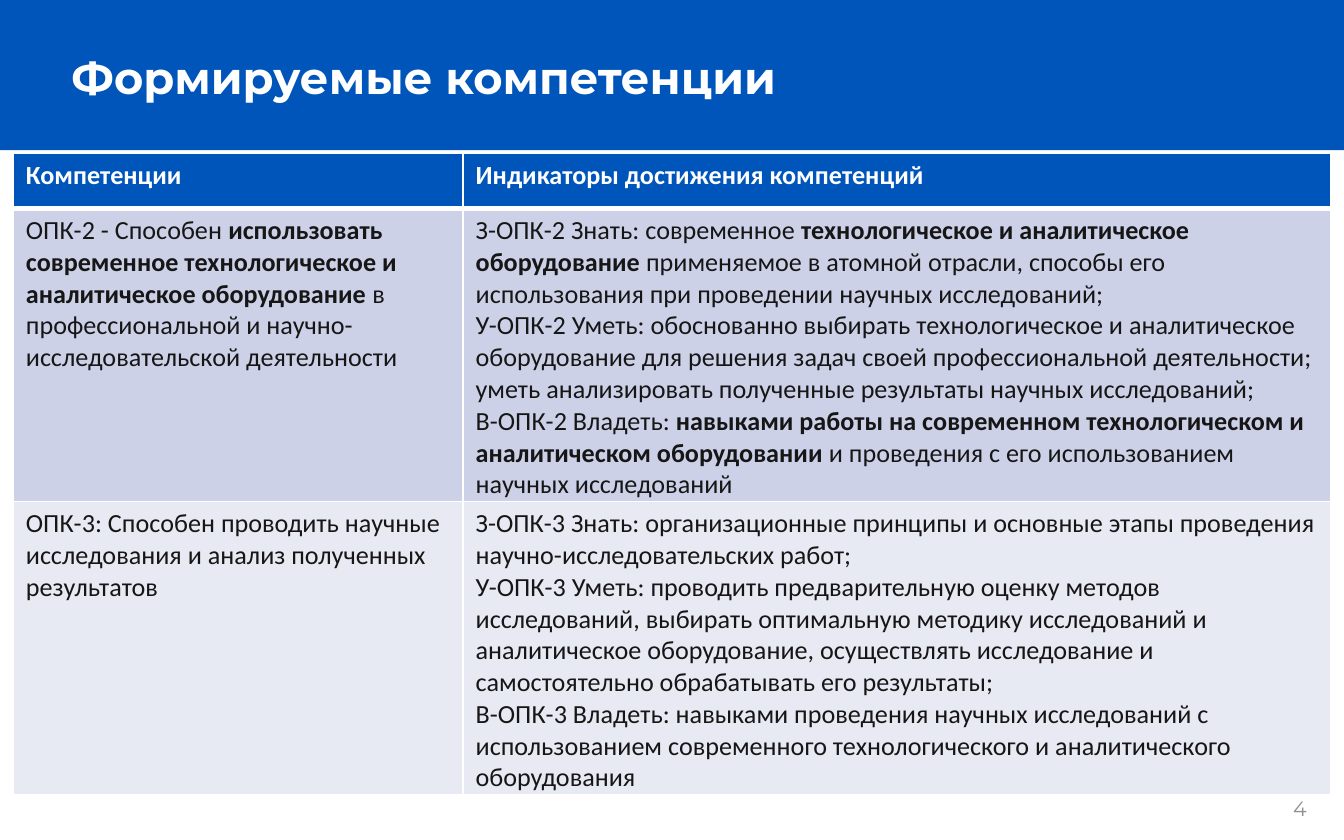
from lxml.etree import SubElement
from pptx import Presentation
from pptx.dml.color import RGBColor as RGB
from pptx.enum.shapes import MSO_SHAPE as SHAPE
from pptx.enum.text import MSO_ANCHOR as ANCHOR, PP_ALIGN as ALIGN
from pptx.oxml import parse_xml
from pptx.oxml.ns import nsdecls, qn
from pptx.util import Cm, Pt

COLORS = {"blue": "0055BB", "white": "FFFFFF", "text": "171616",
          "grey": "8F9092", "band": "CCD1E7", "light": "E7E9F3"}


def color(name):
    return RGB.from_string(COLORS[name])


def write(tf, text, font="Calibri", size=14, fill="text", bold=False):
    """Fill a text frame: one paragraph a line, *stars* switch bold."""
    for i, line in enumerate(text.split("\n")):
        p = tf.paragraphs[0] if i == 0 else tf.add_paragraph()
        p.alignment = ALIGN.LEFT
        for j, part in enumerate(line.split("*")):
            if part:
                r = p.add_run()
                r.text = part
                r.font.name, r.font.size = font, Pt(size)
                r.font.bold = bold or j % 2 == 1
                r.font.color.rgb = color(fill)


prs = Presentation()
prs.slide_width, prs.slide_height = Cm(25.4), Cm(15.88)
s = prs.slides.add_slide(prs.slide_layouts[5])

# Header band
band = s.shapes.add_shape(SHAPE.RECTANGLE, 0, 0, prs.slide_width, Cm(2.84))
band.shadow.inherit = False
band.fill.solid()
band.fill.fore_color.rgb = color("blue")
band.line.fill.background()

# Title, in front of the band
title = s.shapes.title
title.left, title.top, title.width, title.height = Cm(1.17), Cm(0.83), Cm(23.09), Cm(1.22)
band._element.addnext(title._element)
title.text_frame.vertical_anchor = ANCHOR.MIDDLE
write(title.text_frame, "Формируемые компетенции",
      font="Montserrat", size=24, fill="white", bold=True)

# Competence table
rows = [
    ("Компетенции", "Индикаторы достижения компетенций"),
    ("ОПК-2 - Способен *использовать*\n"
     "*современное технологическое и аналитическое оборудование *"
     "в профессиональной и научно-\n"
     "исследовательской деятельности",
     "З-ОПК-2 Знать: современное *технологическое и аналитическое оборудование *"
     "применяемое в атомной отрасли, способы его использования при проведении "
     "научных исследований;\n"
     "У-ОПК-2 Уметь: обоснованно выбирать технологическое и аналитическое "
     "оборудование для решения задач своей профессиональной деятельности; "
     "уметь анализировать полученные результаты научных исследований;\n"
     "В-ОПК-2 Владеть: *навыками работы на современном технологическом и "
     "аналитическом оборудовании *и проведения с его использованием "
     "научных исследований"),
    ("ОПК-3: Способен проводить научные исследования и анализ полученных результатов",
     "З-ОПК-3 Знать: организационные принципы и основные этапы проведения "
     "научно-исследовательских работ;\n"
     "У-ОПК-3 Уметь: проводить предварительную оценку методов исследований, "
     "выбирать оптимальную методику исследований и аналитическое оборудование, "
     "осуществлять исследование и самостоятельно обрабатывать его результаты;\n"
     "В-ОПК-3 Владеть: навыками проведения научных исследований с использованием "
     "современного технологического и аналитического оборудования"),
]
widths, heights = (8.5, 16.4), (1.04, 5.54, 5.54)
fills = ("blue", "band", "light")

frame = s.shapes.add_table(len(rows), len(widths), Cm(0.25), Cm(2.9),
                           Cm(sum(widths)), Cm(sum(heights)))
table = frame.table
for col, width in zip(table.columns, widths):
    col.width = Cm(width)
for i, row in enumerate(rows):
    table.rows[i].height = Cm(heights[i])
    for j, text in enumerate(row):
        cell = table.cell(i, j)
        cell.margin_left = cell.margin_right = Cm(0.24)
        cell.margin_top, cell.margin_bottom = Cm(0.12), 0
        cell.fill.solid()
        cell.fill.fore_color.rgb = color(fills[i])
        write(cell.text_frame, text, fill="white" if i == 0 else "text", bold=i == 0)
        # White borders, thicker under the heading row
        tc_pr = cell._tc.get_or_add_tcPr()
        for k, side in enumerate("LRTB"):
            thick = (i, side) in ((0, "B"), (1, "T"))
            ln = parse_xml(f'<a:ln{side} {nsdecls("a")} w="{Pt(3 if thick else 1)}"/>')
            SubElement(SubElement(ln, qn("a:solidFill")), qn("a:srgbClr"), val=COLORS["white"])
            tc_pr.insert(k, ln)

# Slide number, just below the table
num = s.shapes.add_textbox(Cm(24.26), Cm(14.94), Cm(0.89), Cm(0.66))
write(num.text_frame, "4", font="Montserrat", size=11, fill="grey")

for sp in (title, num):
    tf = sp.text_frame
    tf.margin_left = tf.margin_right = Cm(0.18)
    tf.margin_top = tf.margin_bottom = Cm(0.1)
num.text_frame.word_wrap = False

prs.save("out.pptx")
